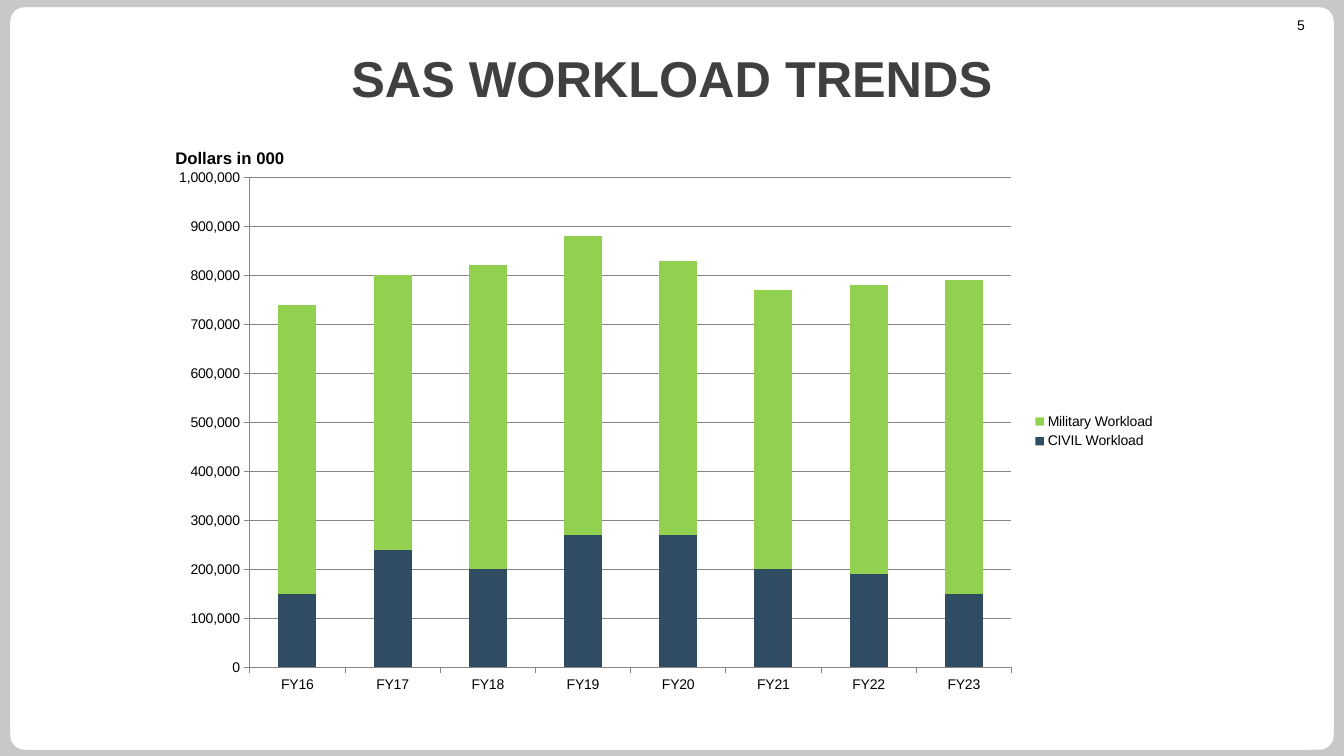
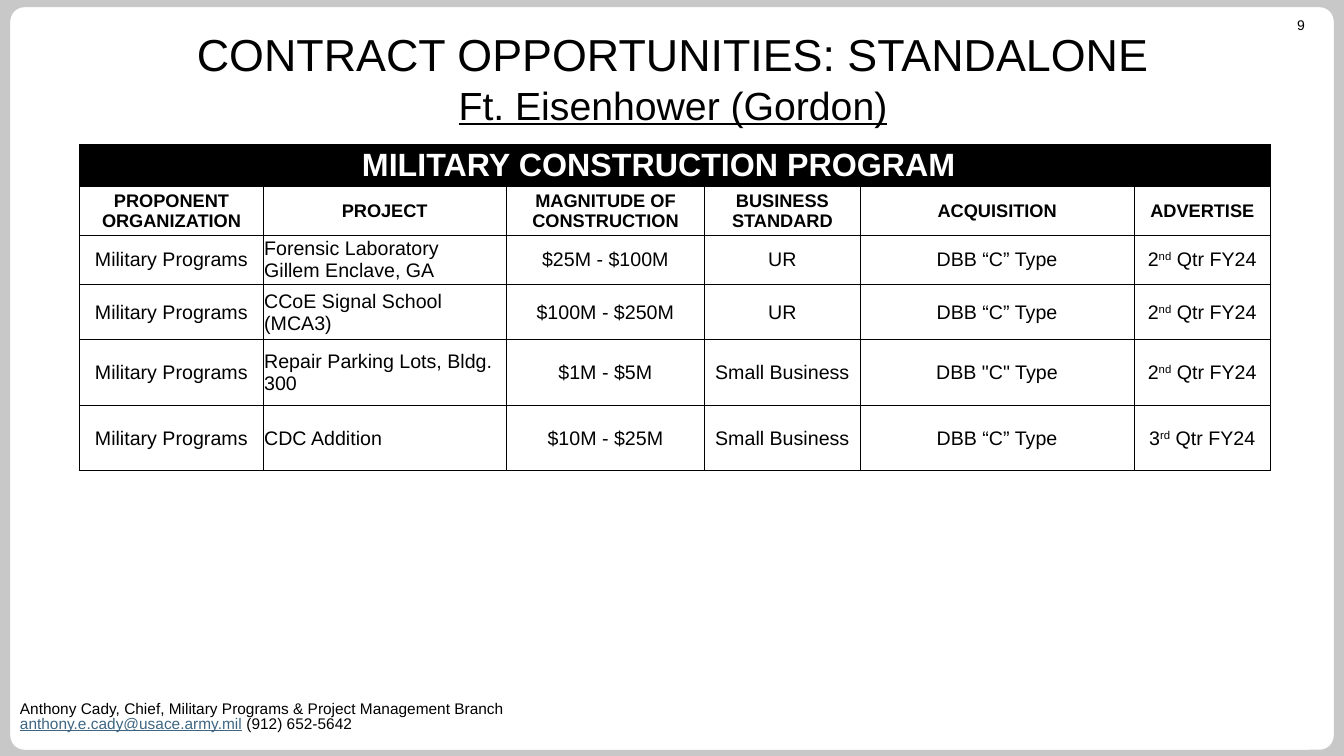
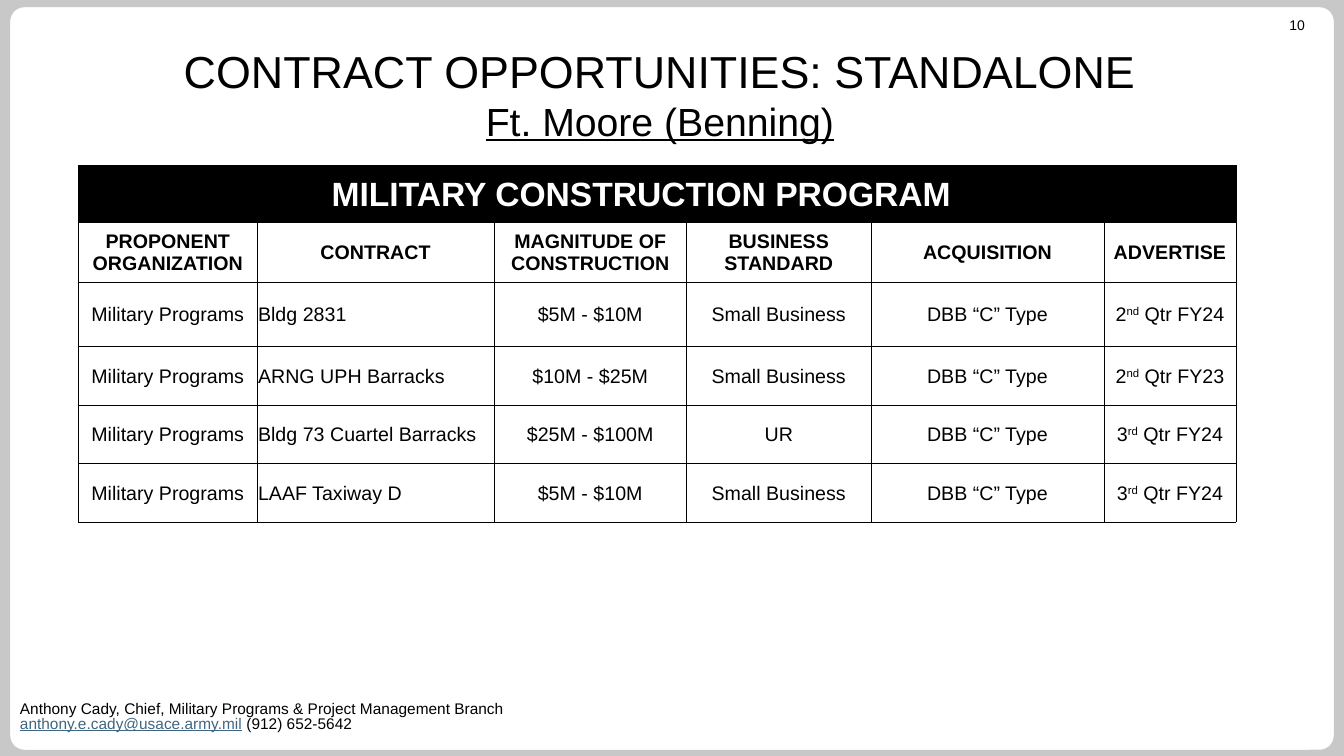
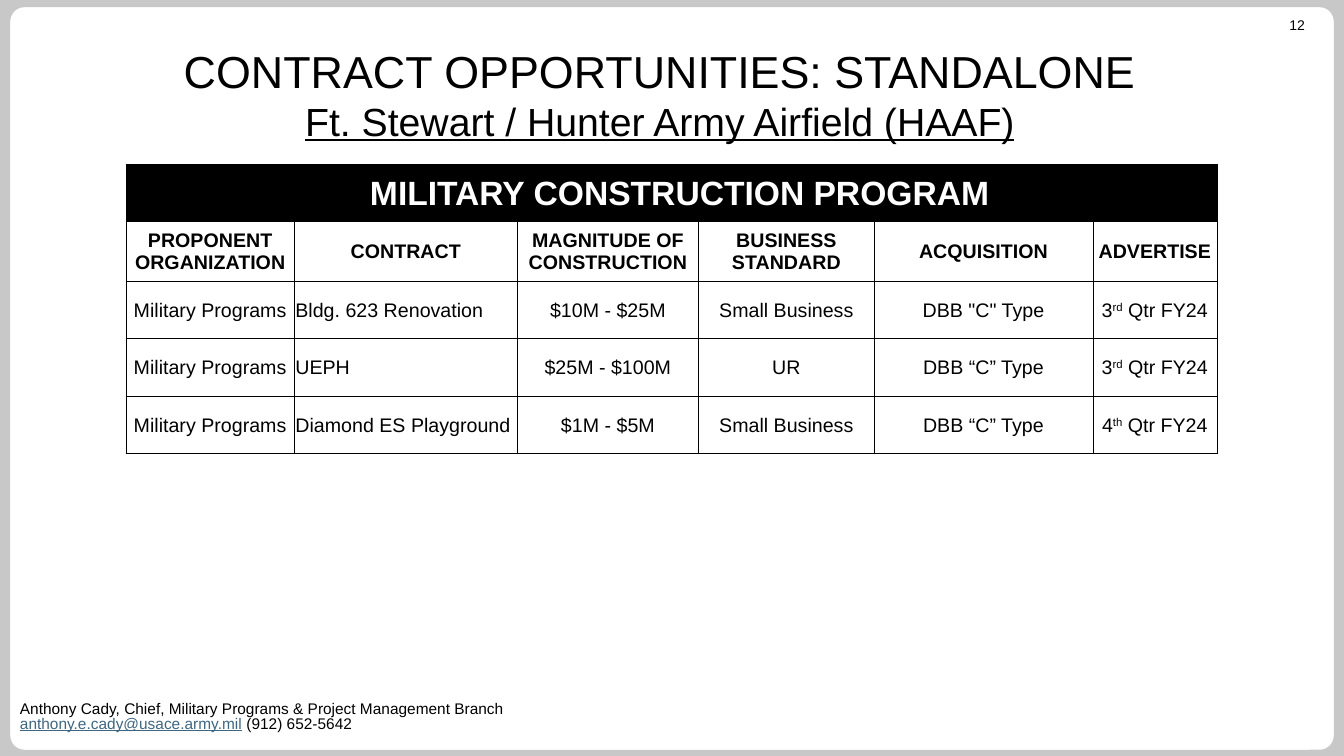
from lxml import etree
from pptx import Presentation
from pptx.chart.data import CategoryChartData
from pptx.dml.color import RGBColor
from pptx.enum import chart as ch, shapes, text
from pptx.oxml import parse_xml
from pptx.oxml.ns import nsdecls, qn
from pptx.util import Inches, Pt

BLACK = RGBColor(0x00, 0x00, 0x00)
WHITE = RGBColor(0xFF, 0xFF, 0xFF)
FRAME_GRAY = RGBColor(0xC8, 0xC8, 0xC8)
TITLE_GRAY = RGBColor(0x40, 0x40, 0x40)
AXIS_GRAY = RGBColor(0x86, 0x86, 0x86)
LINK_BLUE = RGBColor(0x3E, 0x66, 0x82)
CIVIL_NAVY = RGBColor(0x2F, 0x4C, 0x62)
MILITARY_GREEN = RGBColor(0x92, 0xD0, 0x50)

LEFT, CENTER, RIGHT = text.PP_ALIGN.LEFT, text.PP_ALIGN.CENTER, text.PP_ALIGN.RIGHT


def write(paragraph, wording, size, color=BLACK, align=LEFT, **extra):
    paragraph.alignment = align
    for position, piece in enumerate(wording.split("^")):
        run = paragraph.add_run()
        run.text = piece
        run.font.color.rgb = color
        for name, value in {"name": "Arial", "size": Pt(size), **extra}.items():
            setattr(run.font, name, value)
        if position % 2:
            run._r.get_or_add_rPr().set("baseline", "30000")


def text_frame(slide, place, **settings):
    frame = slide.shapes.add_textbox(*map(Inches, place)).text_frame
    for name, value in {"word_wrap": True, **settings}.items():
        setattr(frame, name, value)
    return frame


deck = Presentation()
deck.slide_width, deck.slide_height = Inches(13.33), Inches(7.5)

pages = {}
for number in (5, 9, 10, 12):
    page = deck.slides.add_slide(deck.slide_layouts[6])
    page.background.fill.solid()
    page.background.fill.fore_color.rgb = FRAME_GRAY
    panel = page.shapes.add_shape(
        shapes.MSO_SHAPE.ROUNDED_RECTANGLE, *map(Inches, (0.07, 0.04, 13.19, 7.43)))
    panel.adjustments[0] = 0.023
    panel.shadow.inherit = False
    panel.fill.solid()
    panel.fill.fore_color.rgb = WHITE
    panel.line.color.rgb = FRAME_GRAY
    panel.line.width = Pt(4.5)
    page_number = text_frame(page, (12.2, 0.16, 0.84, 0.17), margin_top=0, margin_bottom=0)
    write(page_number.paragraphs[0], str(number), 10, align=RIGHT)
    pages[number] = page

trends = pages[5]
workload = CategoryChartData(number_format="#,##0")
workload.categories = [f"FY{year}" for year in range(16, 24)]
workload.add_series("CIVIL Workload", [
    150000, 240000, 200000, 270000, 270000, 200000, 190000, 150000])
workload.add_series("Military Workload", [
    590000, 560000, 620000, 610000, 560000, 570000, 590000, 640000])
chart = trends.shapes.add_chart(
    ch.XL_CHART_TYPE.COLUMN_STACKED, *map(Inches, (1.58, 1.57, 9.98, 5.42)), workload).chart
chart.has_title = False
chart.font.name, chart.font.size, chart.font.color.rgb = "Arial", Pt(10), BLACK
chart.has_legend = True
chart.legend.position = ch.XL_LEGEND_POSITION.RIGHT
chart.legend.include_in_layout = False
plot = chart.plots[0]
plot.gap_width, plot.overlap, plot.vary_by_categories = 150, 100, False
for series, color in zip(plot.series, (CIVIL_NAVY, MILITARY_GREEN)):
    series.format.fill.solid()
    series.format.fill.fore_color.rgb = color
dollars = chart.value_axis
dollars.minimum_scale, dollars.maximum_scale, dollars.major_unit = 0, 1000000, 100000
dollars.has_major_gridlines = True
dollars.tick_labels.number_format = "#,##0"
dollars.tick_labels.number_format_is_linked = False
for axis in (dollars, chart.category_axis):
    axis.major_tick_mark = ch.XL_TICK_MARK.OUTSIDE
for part in (dollars, dollars.major_gridlines, chart.category_axis):
    part.format.line.color.rgb = AXIS_GRAY
    part.format.line.width = Pt(0.75)
plot_area = chart._chartSpace.find(".//" + qn("c:plotArea"))
for old_layout in plot_area.findall(qn("c:layout")):
    plot_area.remove(old_layout)
layout = parse_xml(f"<c:layout {nsdecls('c')}><c:manualLayout/></c:layout>")
for tag, value in {"layoutTarget": "inner", "xMode": "edge", "yMode": "edge",
                   "x": 0.09, "y": 0.035, "w": 0.757, "h": 0.897}.items():
    etree.SubElement(layout[0], qn(f"c:{tag}")).set("val", str(value))
plot_area.insert(0, layout)

title = text_frame(trends, (0, 0.14, 13.33, 1.25), vertical_anchor=text.MSO_ANCHOR.MIDDLE)
write(title.paragraphs[0], "SAS WORKLOAD TRENDS", 36, TITLE_GRAY, CENTER, bold=True)
unit = text_frame(trends, (1.64, 1.42, 1.3, 0.3), word_wrap=False)
write(unit.paragraphs[0], "Dollars in 000", 12, bold=True)

opportunities = [
    {"page": 9, "site": "Ft. Eisenhower (Gordon)", "title": (1.81, 0.22, 9.73, 1.11),
     "table": (0.79, 1.43, 11.8, 3.23), "subject": "PROJECT",
     "banner_size": 23, "banner_indent": 0.98, "heading_size": 13,
     "columns": (1.82, 2.41, 1.97, 1.54, 2.72, 1.35),
     "heights": (0.42, 0.48, 0.49, 0.55, 0.65, 0.65),
     "contracts": [
         ("Forensic Laboratory\nGillem Enclave, GA", "$25M - $100M", "UR", "DBB “C” Type", "2^nd^ Qtr FY24"),
         ("CCoE Signal School (MCA3)", "$100M - $250M", "UR", "DBB “C” Type", "2^nd^ Qtr FY24"),
         ("Repair Parking Lots, Bldg. 300", "$1M - $5M", "Small Business", 'DBB "C" Type', "2^nd^ Qtr FY24"),
         ("CDC Addition", "$10M - $25M", "Small Business", "DBB “C” Type", "3^rd^ Qtr FY24")]},
    {"page": 10, "site": "Ft. Moore (Benning)", "title": (1.43, 0.38, 10.23, 1.11),
     "table": (0.78, 1.64, 11.49, 3.52), "subject": "CONTRACT",
     "banner_size": 24, "banner_indent": 0.74, "heading_size": 14,
     "columns": (1.77, 2.35, 1.91, 1.83, 2.31, 1.31),
     "heights": (0.57, 0.59, 0.64, 0.58, 0.58, 0.58),
     "contracts": [
         ("Bldg 2831", "$5M - $10M", "Small Business", "DBB “C” Type", "2^nd^ Qtr FY24"),
         ("ARNG UPH Barracks", "$10M - $25M", "Small Business", "DBB “C” Type", "2^nd^ Qtr FY23"),
         ("Bldg 73 Cuartel Barracks", "$25M - $100M", "UR", "DBB “C” Type", "3^rd^ Qtr FY24"),
         ("LAAF Taxiway D", "$5M - $10M", "Small Business", "DBB “C” Type", "3^rd^ Qtr FY24")]},
    {"page": 12, "site": "Ft. Stewart / Hunter Army Airfield (HAAF)", "title": (1.43, 0.38, 10.23, 1.11),
     "table": (1.25, 1.63, 10.83, 2.86), "subject": "CONTRACT",
     "banner_size": 24, "banner_indent": 0.75, "heading_size": 14,
     "columns": (1.67, 2.21, 1.8, 1.74, 2.17, 1.23),
     "heights": (0.57, 0.59, 0.57, 0.57, 0.57),
     "contracts": [
         ("Bldg. 623 Renovation", "$10M - $25M", "Small Business", 'DBB "C" Type', "3^rd^ Qtr FY24"),
         ("UEPH", "$25M - $100M", "UR", "DBB “C” Type", "3^rd^ Qtr FY24"),
         ("Diamond ES Playground", "$1M - $5M", "Small Business", "DBB “C” Type", "4^th^ Qtr FY24")]},
]

for site in opportunities:
    page = pages[site["page"]]
    heading = text_frame(page, site["title"])
    write(heading.paragraphs[0], "CONTRACT OPPORTUNITIES: STANDALONE", 32, align=CENTER)
    write(heading.add_paragraph(), site["site"], 28, align=CENTER, underline=True)

    headings = ("PROPONENT ORGANIZATION", site["subject"], "MAGNITUDE OF CONSTRUCTION",
                "BUSINESS STANDARD", "ACQUISITION", "ADVERTISE")
    rows = [("", "MILITARY CONSTRUCTION PROGRAM", "", "", "", ""), headings]
    rows += [("Military Programs", *contract) for contract in site["contracts"]]
    program = page.shapes.add_table(
        len(rows), len(headings), *map(Inches, site["table"])).table
    program.first_row = program.horz_banding = False
    for column, width in zip(program.columns, site["columns"]):
        column.width = Inches(width)
    for row, height in zip(program.rows, site["heights"]):
        row.height = Inches(height)
    program.cell(0, 1).merge(program.cell(0, 5))

    for r, row in enumerate(rows):
        for c, wording in enumerate(row):
            cell = program.cell(r, c)
            for name, value in {"margin_left": Inches(0.01), "margin_right": Inches(0.01),
                                "margin_top": Inches(0.01), "margin_bottom": 0,
                                "vertical_anchor": text.MSO_ANCHOR.MIDDLE}.items():
                setattr(cell, name, value)
            if r == 0:
                cell.fill.solid()
                cell.fill.fore_color.rgb = BLACK
                style = {"size": site["banner_size"], "color": WHITE, "bold": True}
            else:
                cell.fill.background()
                style = {"size": site["heading_size"] if r == 1 else 14, "bold": r == 1,
                         "align": LEFT if r > 1 and c == 1 else CENTER}
            for side, edge in enumerate(("lnL", "lnR", "lnT", "lnB")):
                cell._tc.get_or_add_tcPr().insert(side, parse_xml(
                    f'<a:{edge} {nsdecls("a")} w="6350"><a:solidFill>'
                    f'<a:srgbClr val="{BLACK}"/></a:solidFill></a:{edge}>'))
            if wording:
                for i, line in enumerate(wording.split("\n")):
                    frame = cell.text_frame
                    write(frame.add_paragraph() if i else frame.paragraphs[0], line, **style)
    program.cell(0, 1).margin_left = Inches(site["banner_indent"])

    contact = text_frame(page, (0.1, 6.92, 9.54, 0.4))
    write(contact.paragraphs[0], "Anthony Cady, Chief, Military Programs & Project Management Branch", 11)
    reach = contact.add_paragraph()
    write(reach, "anthony.e.cady@usace.army.mil", 11, LINK_BLUE, underline=True)
    write(reach, " (912) 652-5642", 11)
    for paragraph in contact.paragraphs:
        paragraph.line_spacing = 0.8

deck.save("out.pptx")
